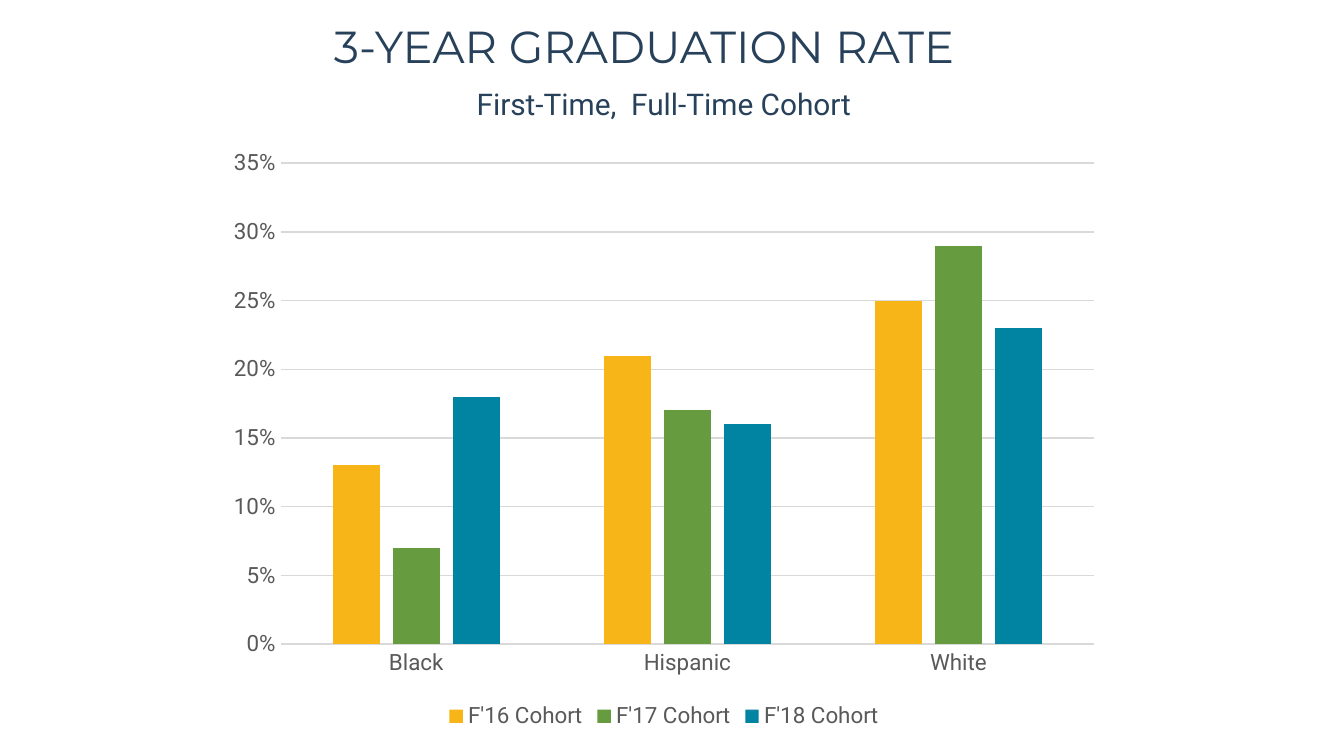
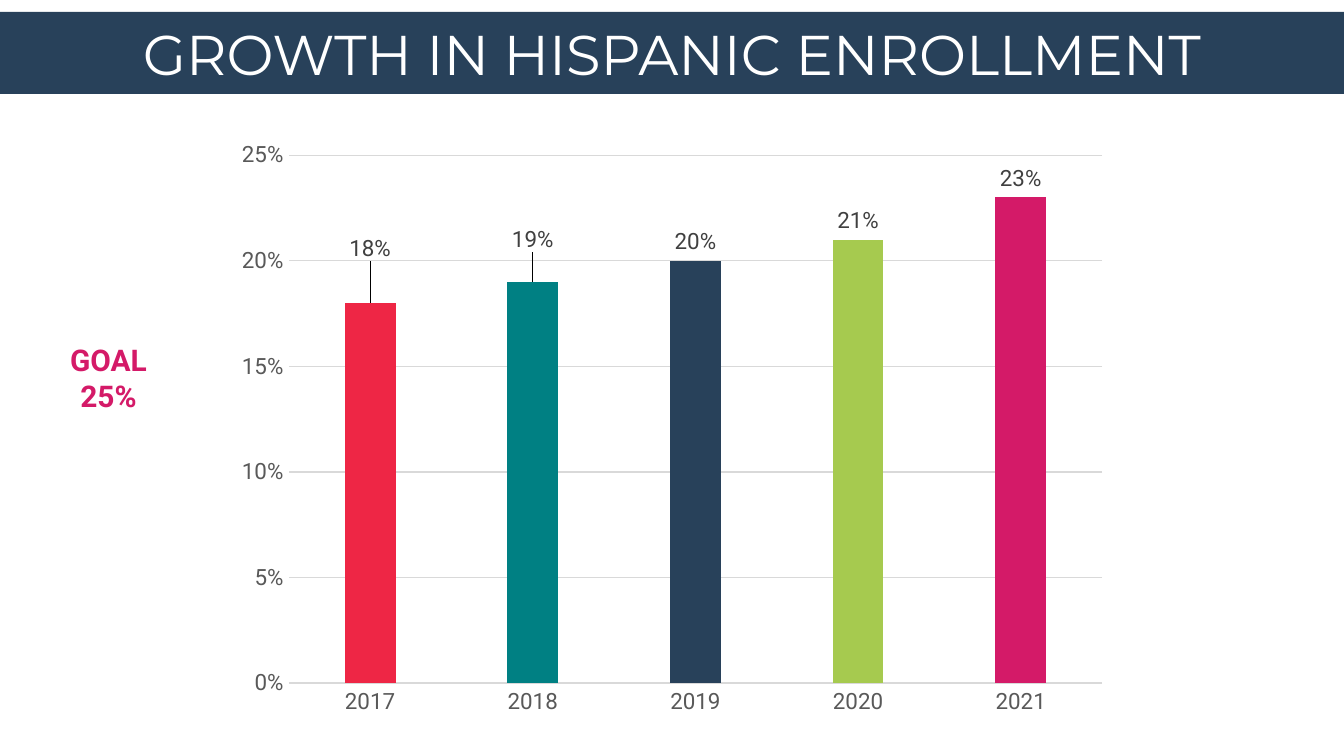
from lxml import etree
from pptx import Presentation
from pptx import util as u
from pptx.chart.data import CategoryChartData
from pptx.dml.color import RGBColor
from pptx.enum import chart as ch, shapes, text
from pptx.oxml.ns import qn

PX_PER_INCH = 134.4
NAVY, WHITE, MAGENTA = "28415A", "FFFFFF", "D41A68"
AXIS_TEXT, LABEL_TEXT, GRID = "595959", "404040", "D9D9D9"
TITLE_FONT, BODY_FONT = "Montserrat", "Roboto"
CHART_SIZE = (896, 597)


def px(*lengths):
    return [u.Emu(round(n * u.Inches(1) / PX_PER_INCH)) for n in lengths]


def rgb(color):
    return RGBColor.from_string(color)


def set_font(font, size, color, name=BODY_FONT, bold=False):
    font.size, font.name, font.bold = u.Pt(size), name, bold
    font.color.rgb = rgb(color)


def write(shape, lines, size, color, name=BODY_FONT, bold=False):
    frame = shape.text_frame
    frame.word_wrap = True
    frame.auto_size = text.MSO_AUTO_SIZE.SHAPE_TO_FIT_TEXT
    frame.text = lines
    for paragraph in frame.paragraphs:
        paragraph.alignment = text.PP_ALIGN.CENTER
        set_font(paragraph.font, size, color, name, bold)


def add_text(slide, box, lines, size, color, name=BODY_FONT, bold=False):
    write(slide.shapes.add_textbox(*px(*box)), lines, size, color, name, bold)


def add_title_band(slide, title):
    band = slide.shapes.add_shape(shapes.MSO_SHAPE.RECTANGLE, *px(0, 12, 1344, 82))
    band.shadow.inherit = False
    band.fill.solid()
    band.fill.fore_color.rgb = rgb(NAVY)
    band.line.fill.background()
    write(band, title, 30, WHITE, TITLE_FONT)


def fill_solid(format_, color):
    format_.fill.solid()
    format_.fill.fore_color.rgb = rgb(color)


def style_axis(axis):
    axis.major_tick_mark = axis.minor_tick_mark = ch.XL_TICK_MARK.NONE
    set_font(axis.tick_labels.font, 12, AXIS_TEXT)


def style_line(line):
    line.color.rgb = rgb(GRID)
    line.width = u.Pt(0.75)


def add_columns(slide, left, top, categories, series, maximum):
    """Add a clustered column chart of percentages, in the shared style."""
    data = CategoryChartData(number_format="0%")
    data.categories = categories
    for name, values in series:
        data.add_series(name, values)
    chart = slide.shapes.add_chart(
        ch.XL_CHART_TYPE.COLUMN_CLUSTERED, *px(left, top, *CHART_SIZE), data).chart
    set_font(chart.font, 10, "000000", "Calibri")
    chart.has_title = chart.has_legend = False

    style_axis(chart.category_axis)
    style_line(chart.category_axis.format.line)
    rates = chart.value_axis
    style_axis(rates)
    rates.format.line.fill.background()
    style_line(rates.major_gridlines.format.line)
    rates.minimum_scale, rates.maximum_scale, rates.major_unit = 0, maximum, 0.05
    rates.tick_labels.number_format = "0%"
    rates.tick_labels.number_format_is_linked = False

    plot = chart.plots[0]
    plot.vary_by_categories = False
    plot.gap_width, plot.overlap = 219, -27
    return chart


def add_legend(chart):
    chart.has_legend = True
    chart.legend.position = ch.XL_LEGEND_POSITION.BOTTOM
    chart.legend.include_in_layout = False
    set_font(chart.legend.font, 12, AXIS_TEXT)


def label_values(series):
    labels = series.data_labels
    labels.show_value = True
    labels.number_format = "0%"
    labels.number_format_is_linked = False
    labels.position = ch.XL_LABEL_POSITION.OUTSIDE_END
    set_font(labels.font, 12, LABEL_TEXT)


def raise_label(series, index, rise):
    """Move one value label up by a share of the chart's height."""
    label = series.points[index].data_label
    set_font(label.font, 12, LABEL_TEXT)
    label.position = ch.XL_LABEL_POSITION.OUTSIDE_END
    for element in series.data_labels._element.findall(qn("c:dLbl")):
        idx = element.find(qn("c:idx"))
        if idx.get("val") == str(index):
            layout = etree.Element(qn("c:layout"))
            manual = etree.SubElement(layout, qn("c:manualLayout"))
            etree.SubElement(manual, qn("c:x")).set("val", "0")
            etree.SubElement(manual, qn("c:y")).set("val", str(-rise))
            idx.addnext(layout)


def build_graduation(slide):
    add_text(slide, (71, 12, 1146, 67), "3-YEAR GRADUATION RATE", 24, NAVY, TITLE_FONT)
    add_text(slide, (-16, 79, 1360, 50), "First-Time,  Full-Time Cohort", 16, NAVY)
    cohorts = [("F'16 Cohort", (0.13, 0.21, 0.25)),
               ("F'17 Cohort", (0.07, 0.17, 0.29)),
               ("F'18 Cohort", (0.18, 0.16, 0.23))]
    chart = add_columns(slide, 216, 138, ("Black", "Hispanic", "White"), cohorts, 0.35)
    for cohort, color in zip(chart.series, ("F7B517", "669B40", "0084A2")):
        fill_solid(cohort.format, color)
    add_legend(chart)


def build_enrollment(slide):
    add_title_band(slide, "GROWTH IN HISPANIC ENROLLMENT")
    years = ("2017", "2018", "2019", "2020", "2021")
    shares = [("Series 1", (0.18, 0.19, 0.2, 0.21, 0.23))]
    chart = add_columns(slide, 224, 130, years, shares, 0.25)
    enrollment = chart.series[0]
    fill_solid(enrollment.format, "4F81BD")
    for index, color in enumerate(("EE2645", "008083", NAVY, "A6CA4F", MAGENTA)):
        fill_solid(enrollment.points[index].format, color)
    label_values(enrollment)
    raise_label(enrollment, 0, 0.06)
    raise_label(enrollment, 1, 0.04)
    add_text(slide, (50, 335, 117, 86), "GOAL\n25%", 16, MAGENTA, bold=True)


def main():
    deck = Presentation()
    deck.slide_width, deck.slide_height = px(1344, 756)
    for build in (build_graduation, build_enrollment):
        build(deck.slides.add_slide(deck.slide_layouts[6]))
    deck.save("out.pptx")


if __name__ == "__main__":
    main()
